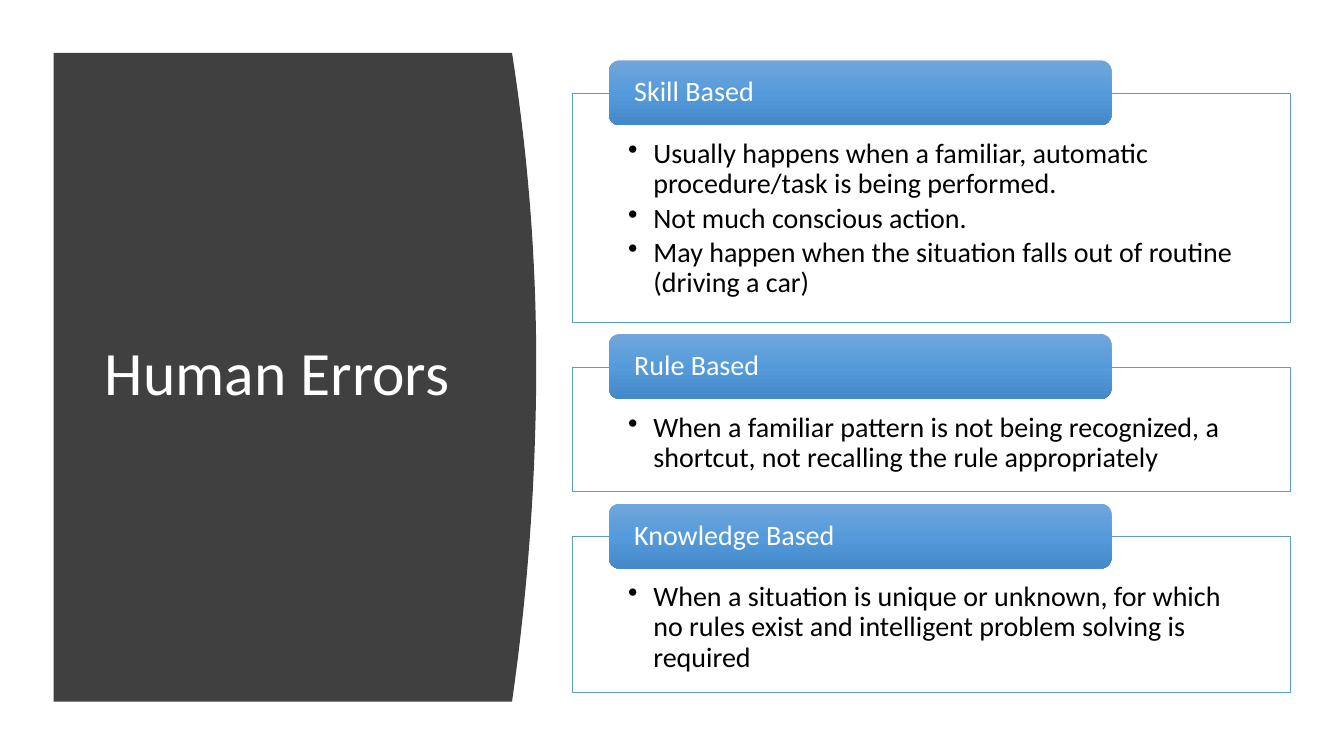
"""Builds the Human Errors slide: a curved title panel beside three labelled lists."""
import copy

import lxml.etree
import pptx
import pptx.dml.color
import pptx.enum.shapes
import pptx.enum.text
import pptx.oxml.ns
import pptx.util

THEME = {
    "font": "Calibri", "title_size": 44, "text_size": 20,
    "dark": "404040", "light": "FFFFFF", "ink": "000000", "accent": "5B9BD5",
    "tab_gradient": ["71A6DB", "559BDB", "448ACA"],
}
ERROR_TYPES = [
    ("Skill Based", 30.27, [
        "Usually happens when a familiar, automatic procedure/task is being performed.",
        "Not much conscious action.",
        "May happen when the situation falls out of routine (driving a car)"]),
    ("Rule Based", 16.5, [
        "When a familiar pattern is not being recognized, a shortcut, "
        "not recalling the rule appropriately"]),
    ("Knowledge Based", 20.67, [
        "When a situation is unique or unknown, for which no rules exist "
        "and intelligent problem solving is required"]),
]

rgb = pptx.dml.color.RGBColor.from_string
qn = pptx.oxml.ns.qn
anchors = pptx.enum.text.MSO_ANCHOR
presets = pptx.enum.shapes.MSO_SHAPE

deck = pptx.Presentation()
deck.slide_width = pptx.util.Inches(13.33)
deck.slide_height = pptx.util.Inches(7.5)
column, row = deck.slide_width / 100, deck.slide_height / 100
slide = deck.slides.add_slide(deck.slide_layouts[5])


def grid(left, top, width, height):
    """Turn grid columns and rows into slide lengths."""
    return [int(left * column), int(top * row), int(width * column), int(height * row)]


def write(frame, lines, size=THEME["text_size"], color=THEME["light"],
          anchor=anchors.MIDDLE, margins=None, bullet=None, after=0):
    """Fill a text frame with formatted paragraphs."""
    frame.word_wrap = True
    frame.vertical_anchor = anchor
    if margins:
        (frame.margin_left, frame.margin_top,
         frame.margin_right, frame.margin_bottom) = grid(*margins)
    for number, line in enumerate(lines):
        paragraph = frame.add_paragraph() if number else frame.paragraphs[0]
        paragraph.alignment = pptx.enum.text.PP_ALIGN.LEFT
        paragraph.line_spacing = 0.9
        paragraph.space_before = pptx.util.Pt(0)
        paragraph.space_after = pptx.util.Pt(after)
        run = paragraph.add_run()
        run.text = line
        run.font.name = THEME["font"]
        run.font.size = pptx.util.Pt(size)
        run.font.color.rgb = rgb(color)
        if bullet:
            properties = paragraph._p.get_or_add_pPr()
            indent = pptx.util.Inches(0.25)
            properties.set("marL", str(indent))
            properties.set("indent", str(-indent))
            lxml.etree.SubElement(properties, qn("a:buChar")).set("char", bullet)


edge_left, edge_top, edge_right, edge_bottom = 4, 7, 38.1, 92.8
peak, bulge, steps = 48, 1.8, 40
curve = []
for step in range(steps + 1):
    height = edge_top + (edge_bottom - edge_top) * step / steps
    reach = peak - edge_top if height < peak else edge_bottom - peak
    across = edge_right + bulge * (1 - ((height - peak) / reach) ** 2)
    curve.append((int(across * column), int(height * row)))
builder = slide.shapes.build_freeform(int(edge_left * column), int(edge_top * row), scale=1)
builder.add_line_segments(curve + [(int(edge_left * column), int(edge_bottom * row))])
backdrop = builder.convert_to_shape()
backdrop.shadow.inherit = False
backdrop.fill.solid()
backdrop.fill.fore_color.rgb = rgb(THEME["dark"])
backdrop.line.fill.background()

heading = slide.shapes.title
heading.left, heading.top, heading.width, heading.height = grid(7.05, 14.8, 28.05, 69.87)
write(heading.text_frame, ["Human Errors"], size=THEME["title_size"])
backdrop._element.addnext(heading._element)

panel_left, panel_width, panel_gap = 42.6, 53.4, 5.93
tab_left, tab_width, tab_height, tab_rise = 45.3, 37.4, 8.6, 4.35
panel_top = 12.33
for label, panel_height, points in ERROR_TYPES:
    panel = slide.shapes.add_shape(
        presets.RECTANGLE, *grid(panel_left, panel_top, panel_width, panel_height))
    panel.shadow.inherit = False
    panel.fill.solid()
    panel.fill.fore_color.rgb = rgb(THEME["light"])
    tint = panel._element.spPr.find(qn("a:solidFill"))[0]
    lxml.etree.SubElement(tint, qn("a:alpha")).set("val", "90000")
    panel.line.color.rgb = rgb(THEME["accent"])
    panel.line.width = pptx.util.Pt(0.5)
    write(panel.text_frame, points, color=THEME["ink"], anchor=anchors.TOP,
          margins=(4.14, 6.1, 4.14, 2.1), bullet="•", after=3)

    tab = slide.shapes.add_shape(
        presets.ROUNDED_RECTANGLE,
        *grid(tab_left, panel_top - tab_rise, tab_width, tab_height))
    tab.shadow.inherit = False
    tab.line.fill.background()
    tab.fill.gradient()
    tab.fill.gradient_angle = 270
    stop_list = tab._element.spPr.find(qn("a:gradFill")).find(qn("a:gsLst"))
    stop_list.append(copy.deepcopy(stop_list[0]))
    for number, shade in enumerate(THEME["tab_gradient"]):
        stop = tab.fill.gradient_stops[number]
        stop.position = number / 2
        stop.color.rgb = rgb(shade)
    write(tab.text_frame, [label], margins=(1.65, 0, 1.65, 0))
    panel_top += panel_height + panel_gap

deck.save("out.pptx")
